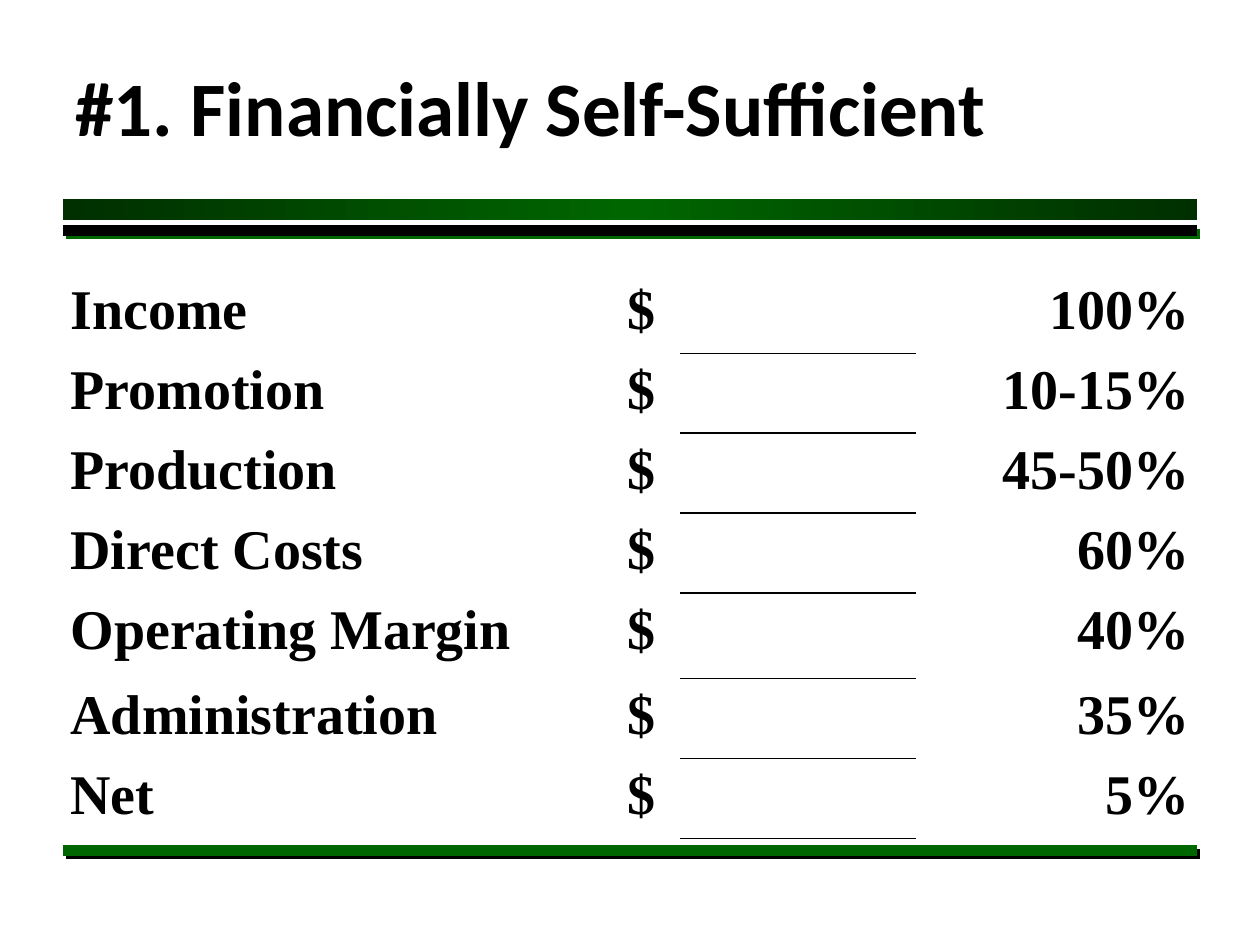
from dataclasses import dataclass

from lxml import etree
from pptx import Presentation
from pptx import util as u
from pptx.dml.color import RGBColor
from pptx.enum import shapes, text
from pptx.oxml import parse_xml
from pptx.oxml.ns import nsdecls, qn

COLOURS = {"ink": "000000", "green": "006600", "dark_green": "002F00"}
TITLE_FONT = {"name": "Calibri", "size": u.Pt(44), "bold": True}
TABLE_FONT = {"name": "Times New Roman", "size": u.Pt(32), "bold": True}
NO_STYLE = "{2D5ABB26-0587-4C30-8999-92F81FD0307C}"
LEFT, WIDTH = 0.5, 9


@dataclass
class Rule:
    y: float
    colour: str
    shadow: str


@dataclass
class BudgetLine:
    label: str
    share: str
    height: float = 0.63


RULES = [Rule(1.83, "ink", "green"), Rule(6.75, "green", "ink")]
COLUMNS = [4.32, 0.62, 1.87, 2.27]
ALIGNMENTS = [text.PP_ALIGN.LEFT, text.PP_ALIGN.CENTER, None, text.PP_ALIGN.RIGHT]
AMOUNT_COLUMN = 2
BUDGET = [
    BudgetLine("Income", "100%"),
    BudgetLine("Promotion", "10-15%"),
    BudgetLine("Production", "45-50%"),
    BudgetLine("Direct Costs", "60%"),
    BudgetLine("Operating Margin", "40%", 0.68),
    BudgetLine("Administration", "35%"),
    BudgetLine("Net", "5%"),
]


def write(paragraph, words: str, font_values: dict) -> None:
    run = paragraph.add_run()
    run.text = words
    for name, value in font_values.items():
        setattr(run.font, name, value)
    run.font.color.rgb = RGBColor.from_string(COLOURS["ink"])


def solid_fill(colour: str) -> str:
    return f'<a:solidFill><a:srgbClr val="{COLOURS[colour]}"/></a:solidFill>'


def draw_band(slide) -> None:
    band = slide.shapes.add_shape(
        shapes.MSO_SHAPE.RECTANGLE,
        u.Inches(LEFT), u.Inches(1.58), u.Inches(WIDTH), u.Inches(0.17))
    band.shadow.inherit = False
    band.line.fill.background()
    stops = "".join(
        f'<a:gs pos="{percent * 1000}"><a:srgbClr val="{COLOURS[colour]}"/></a:gs>'
        for percent, colour in [(0, "dark_green"), (50, "green"), (100, "dark_green")])
    gradient = parse_xml(
        f'<a:gradFill {nsdecls("a")} rotWithShape="1"><a:gsLst>{stops}</a:gsLst>'
        '<a:lin ang="0" scaled="1"/></a:gradFill>')
    band._element.spPr.find(qn("a:prstGeom")).addnext(gradient)


def draw_rule(slide, rule: Rule) -> None:
    line = slide.shapes.add_connector(
        shapes.MSO_CONNECTOR.STRAIGHT, u.Inches(LEFT), u.Inches(rule.y),
        u.Inches(LEFT + WIDTH), u.Inches(rule.y))
    line.line.width = u.Pt(6)
    line.line.color.rgb = RGBColor.from_string(COLOURS[rule.colour])
    line._element.spPr.append(parse_xml(
        f'<a:effectLst {nsdecls("a")}><a:outerShdw dist="{u.Pt(2.8)}" dir="2700000" '
        f'algn="ctr" rotWithShape="0"><a:srgbClr val="{COLOURS[rule.shadow]}"/>'
        '</a:outerShdw></a:effectLst>'))


def draw_title(slide) -> None:
    box = slide.shapes.add_textbox(
        u.Inches(LEFT), u.Inches(0.42), u.Inches(WIDTH), u.Inches(1.13))
    box.text_frame.word_wrap = True
    write(box.text_frame.paragraphs[0], "#1. Financially Self-Sufficient", TITLE_FONT)


def add_borders(cell, sides: str) -> None:
    properties = cell._tc.get_or_add_tcPr()
    for index, side in enumerate(sides):
        properties.insert(index, parse_xml(
            f'<a:ln{side} {nsdecls("a")} w="{u.Pt(1)}">{solid_fill("ink")}</a:ln{side}>'))


def fill_cell(cell, words: str, alignment) -> None:
    paragraph = cell.text_frame.paragraphs[0]
    paragraph.alignment = alignment
    spacing = etree.SubElement(paragraph._p.get_or_add_pPr(), qn("a:spcBef"))
    etree.SubElement(spacing, qn("a:spcPct")).set("val", "20000")
    write(paragraph, words, TABLE_FONT)


def draw_budget(slide) -> None:
    frame = slide.shapes.add_table(
        len(BUDGET), len(COLUMNS), u.Inches(0.46), u.Inches(2.17),
        u.Inches(sum(COLUMNS)), u.Inches(sum(line.height for line in BUDGET)))
    table = frame.table
    table.first_row = table.horz_banding = False
    table._tbl.tblPr.find(qn("a:tableStyleId")).text = NO_STYLE
    for column, width in zip(table.columns, COLUMNS):
        column.width = u.Inches(width)
    for index, line in enumerate(BUDGET):
        row = table.rows[index]
        row.height = u.Inches(line.height)
        values = [line.label, "$", "", line.share]
        for cell, value, alignment in zip(row.cells, values, ALIGNMENTS):
            cell.fill.background()
            if value:
                fill_cell(cell, value, alignment)
        add_borders(row.cells[AMOUNT_COLUMN], "TB" if index else "B")


def main() -> None:
    presentation = Presentation()
    presentation.slide_width = u.Inches(10)
    presentation.slide_height = u.Inches(7.5)
    slide = presentation.slides.add_slide(presentation.slide_layouts[6])
    # Band and rules that frame the content
    draw_band(slide)
    for rule in RULES:
        draw_rule(slide, rule)
    # Title and budget table
    draw_title(slide)
    draw_budget(slide)
    presentation.save("out.pptx")


if __name__ == "__main__":
    main()
